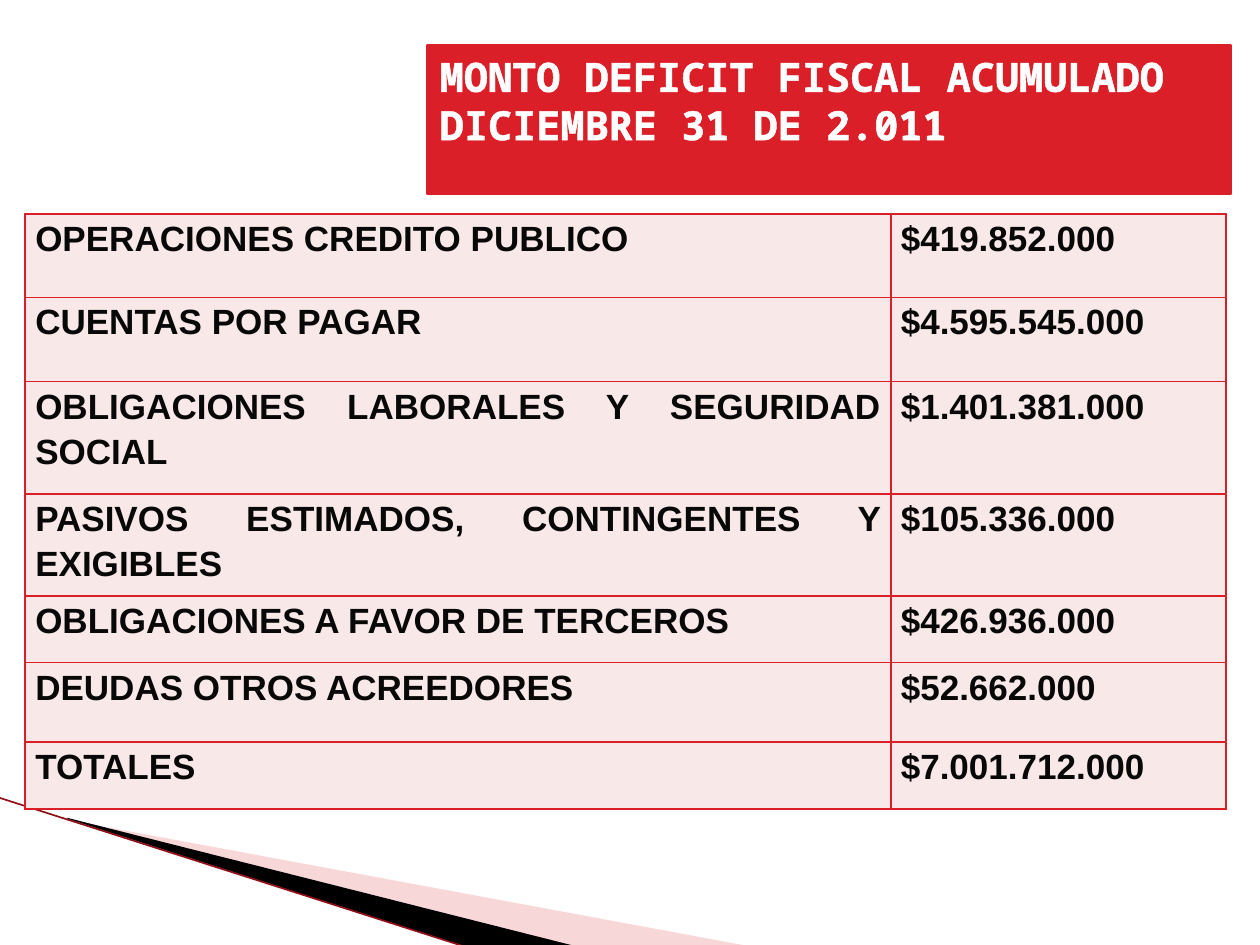
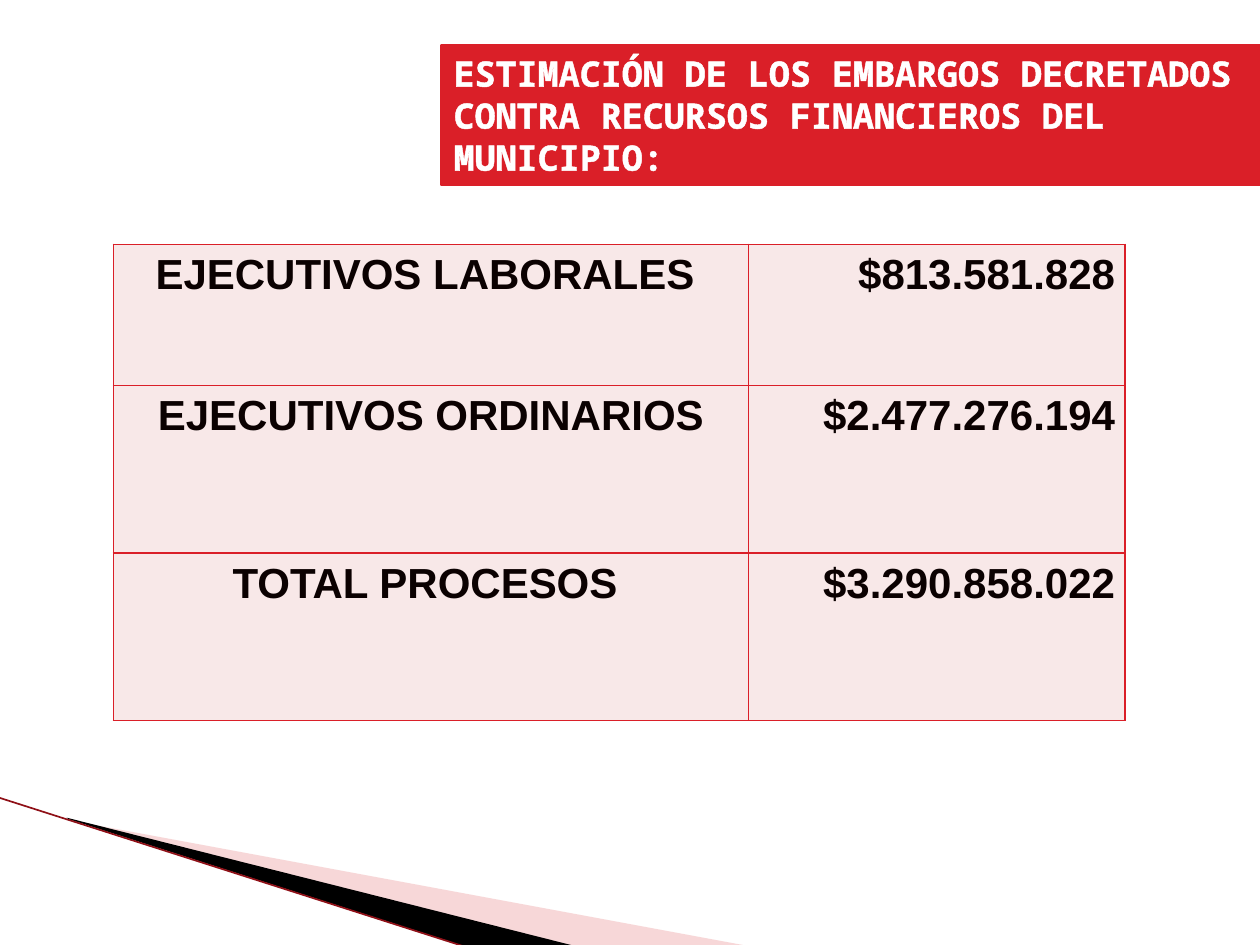
from typing import NamedTuple

from lxml import etree
from pptx import Presentation
from pptx.dml.color import RGBColor
from pptx.enum.text import MSO_ANCHOR, MSO_AUTO_SIZE, PP_ALIGN
from pptx.oxml.ns import qn
from pptx.util import Inches, Pt

COLORS = {
    "red": "DA1F28",
    "cell": "F8E8E8",
    "pink": "ED9D9E",
    "black": "000000",
    "dark_red": "8F1017",
    "white": "FFFFFF",
    "table_text": "080808",
    "claims_text": "0B0101",
}
TITLE_FONT = "Noto Sans Mono"
TABLE_FONT = "Arial"
TITLE_FRAME = {
    "word_wrap": True,
    "auto_size": MSO_AUTO_SIZE.NONE,
    "vertical_anchor": MSO_ANCHOR.TOP,
}
CELL_FORMAT = {
    "margin_left": Inches(0.08),
    "margin_right": Inches(0.08),
    "margin_top": 0,
    "margin_bottom": 0,
    "vertical_anchor": MSO_ANCHOR.TOP,
}


class Box(NamedTuple):
    left: float
    top: float
    width: float
    height: float


class Wedge(NamedTuple):
    points: list[tuple[float, float]]
    color: str
    opacity: int


class TitleBand(NamedTuple):
    lines: list[str]
    box: Box
    size: int


class AmountTable(NamedTuple):
    left: float
    top: float
    column_widths: list[float]
    row_heights: list[float]
    rows: list[tuple[str, str]]
    alignments: tuple
    size: int
    color: str


WEDGES = [
    Wedge([(0.55, 6.51), (5.95, 7.51), (4.56, 7.51), (0.55, 6.5)], "pink", 40),
    Wedge([(0.53, 6.49), (4.57, 7.51), (3.72, 7.52), (0.54, 6.5)], "black", 100),
]

SLIDES = [
    (
        TitleBand(
            ["MONTO DEFICIT FISCAL ACUMULADO", "DICIEMBRE 31 DE 2.011"],
            Box(3.39, 0.36, 6.38, 1.18), 23,
        ),
        AmountTable(
            0.2, 1.7, [6.87, 2.66], [0.66, 0.67, 0.89, 0.81, 0.53, 0.63, 0.53],
            [
                ("OPERACIONES CREDITO PUBLICO", "$419.852.000"),
                ("CUENTAS POR PAGAR", "$4.595.545.000"),
                ("OBLIGACIONES LABORALES Y SEGURIDAD SOCIAL", "$1.401.381.000"),
                ("PASIVOS ESTIMADOS, CONTINGENTES Y EXIGIBLES", "$105.336.000"),
                ("OBLIGACIONES A FAVOR DE TERCEROS", "$426.936.000"),
                ("DEUDAS OTROS ACREEDORES", "$52.662.000"),
                ("TOTALES", "$7.001.712.000"),
            ],
            (PP_ALIGN.JUSTIFY, PP_ALIGN.JUSTIFY), 20, "table_text",
        ),
    ),
    (
        TitleBand(
            ["ESTIMACIÓN DE LOS EMBARGOS DECRETADOS CONTRA RECURSOS "
             "FINANCIEROS DEL MUNICIPIO:"],
            Box(3.5, 0.36, 6.5, 1.11), 20,
        ),
        AmountTable(
            0.9, 1.94, [5.04, 2.99], [1.12, 1.33, 1.33],
            [
                ("EJECUTIVOS LABORALES ", "$813.581.828"),
                ("EJECUTIVOS ORDINARIOS", "$2.477.276.194"),
                ("TOTAL PROCESOS ", "$3.290.858.022"),
            ],
            (PP_ALIGN.CENTER, PP_ALIGN.RIGHT), 24, "claims_text",
        ),
    ),
]


def rgb(name: str) -> RGBColor:
    return RGBColor.from_string(COLORS[name])


def apply_format(target, values: dict) -> None:
    for name, value in values.items():
        setattr(target, name, value)


def style_font(font, name: str, size: int, color: str) -> None:
    apply_format(font, {"name": name, "size": Pt(size), "bold": True})
    font.color.rgb = rgb(color)


def outline_element(tag: str, color: str, points: float):
    line = etree.Element(qn(tag), w=str(Pt(points)))
    fill = etree.SubElement(line, qn("a:solidFill"))
    etree.SubElement(fill, qn("a:srgbClr"), val=COLORS[color])
    return line


def add_corner_decoration(slide) -> None:
    for wedge in WEDGES:
        points = [(Inches(x), Inches(y)) for x, y in wedge.points]
        builder = slide.shapes.build_freeform(*points[0])
        builder.add_line_segments(points[1:], close=True)
        shape = builder.convert_to_shape()
        shape.shadow.inherit = False
        shape.line.fill.background()
        shape.fill.solid()
        shape.fill.fore_color.rgb = rgb(wedge.color)
        if wedge.opacity < 100:
            color = shape.fill._xPr.find(".//" + qn("a:srgbClr"))
            etree.SubElement(color, qn("a:alpha"), val=str(wedge.opacity * 1000))

    edge = slide.shapes.add_connector(
        1, Inches(-0.01), Inches(6.33), Inches(3.71), Inches(7.52))
    edge.line.color.rgb = rgb("dark_red")
    edge.line.width = Pt(0.95)
    etree.SubElement(edge._element.spPr, qn("a:effectLst"))


def format_title(slide, band: TitleBand) -> None:
    title = slide.shapes.title
    position = {name: Inches(value) for name, value in band.box._asdict().items()}
    apply_format(title, position)
    title.fill.solid()
    title.fill.fore_color.rgb = rgb("red")
    title.line.color.rgb = rgb("red")
    title.line.width = Pt(1.5)
    frame = title.text_frame
    apply_format(frame, TITLE_FRAME)
    frame.text = "\n".join(band.lines)
    for paragraph in frame.paragraphs:
        apply_format(paragraph, {"alignment": PP_ALIGN.LEFT, "space_before": Pt(0)})
        run = paragraph.runs[0]
        style_font(run.font, TITLE_FONT, band.size, "white")
        run.font._element.insert(0, outline_element("a:ln", "white", 1.45))


def format_cell(cell, text: str, alignment, table: AmountTable) -> None:
    apply_format(cell, CELL_FORMAT)
    cell.fill.solid()
    cell.fill.fore_color.rgb = rgb("cell")
    properties = cell._tc.get_or_add_tcPr()
    for index, side in enumerate("LRTB"):
        properties.insert(index, outline_element(f"a:ln{side}", "red", 1))
    cell.text = text
    paragraph = cell.text_frame.paragraphs[0]
    apply_format(paragraph, {"alignment": alignment, "line_spacing": 1.15})
    style_font(paragraph.runs[0].font, TABLE_FONT, table.size, table.color)


def add_amount_table(slide, content: AmountTable) -> None:
    table = slide.shapes.add_table(
        len(content.rows), len(content.column_widths),
        Inches(content.left), Inches(content.top),
        Inches(sum(content.column_widths)), Inches(sum(content.row_heights)),
    ).table
    apply_format(table, {"first_row": False, "horz_banding": False})
    for column, width in zip(table.columns, content.column_widths):
        column.width = Inches(width)
    for row, height, texts in zip(table.rows, content.row_heights, content.rows):
        row.height = Inches(height)
        for cell, text, alignment in zip(row.cells, texts, content.alignments):
            format_cell(cell, text, alignment, content)


def main() -> None:
    presentation = Presentation()
    presentation.slide_width = Inches(10)
    presentation.slide_height = Inches(7.5)
    title_only = presentation.slide_layouts[5]
    for band, table in SLIDES:
        slide = presentation.slides.add_slide(title_only)
        add_corner_decoration(slide)
        add_amount_table(slide, table)
        format_title(slide, band)
    presentation.save("out.pptx")


if __name__ == "__main__":
    main()
